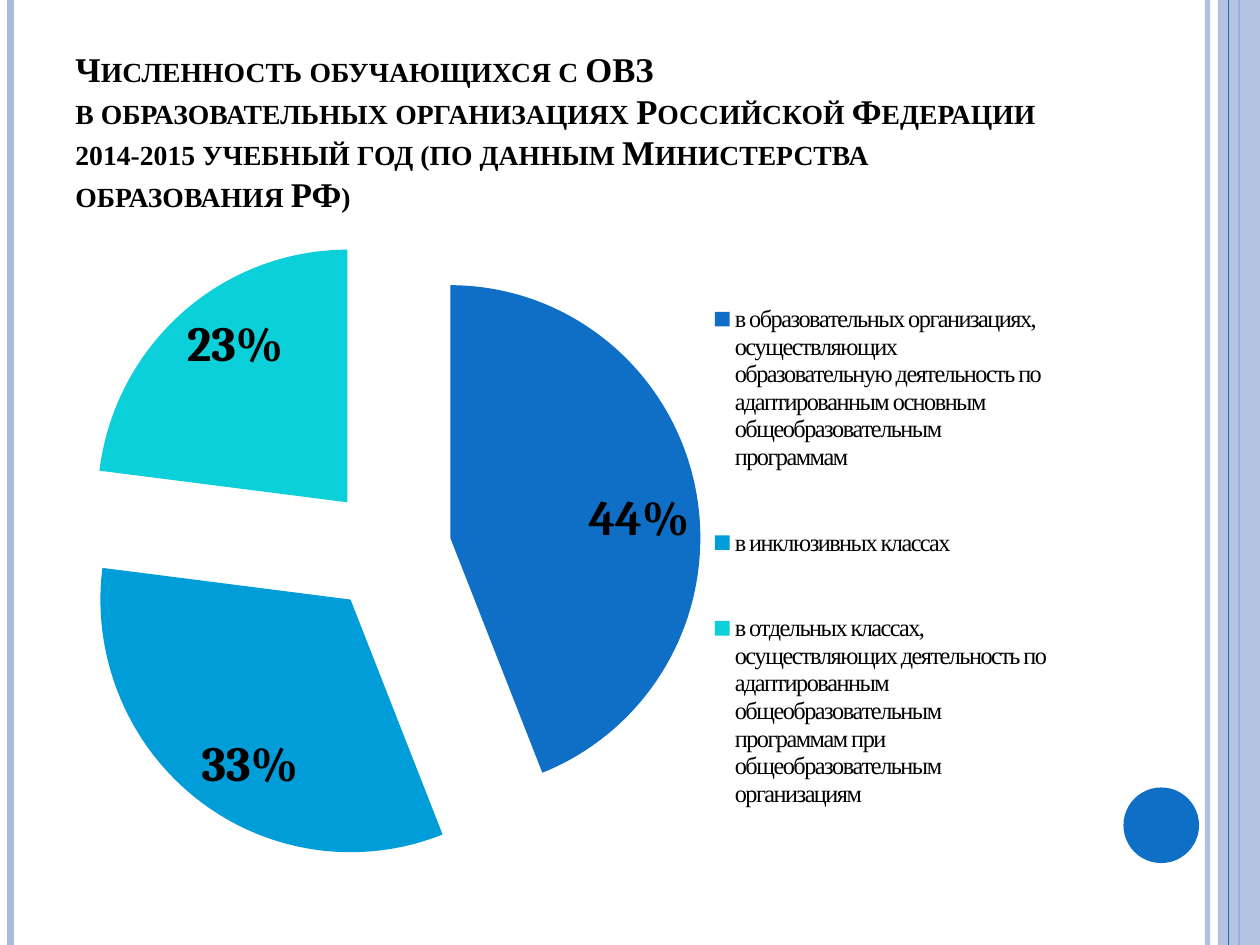
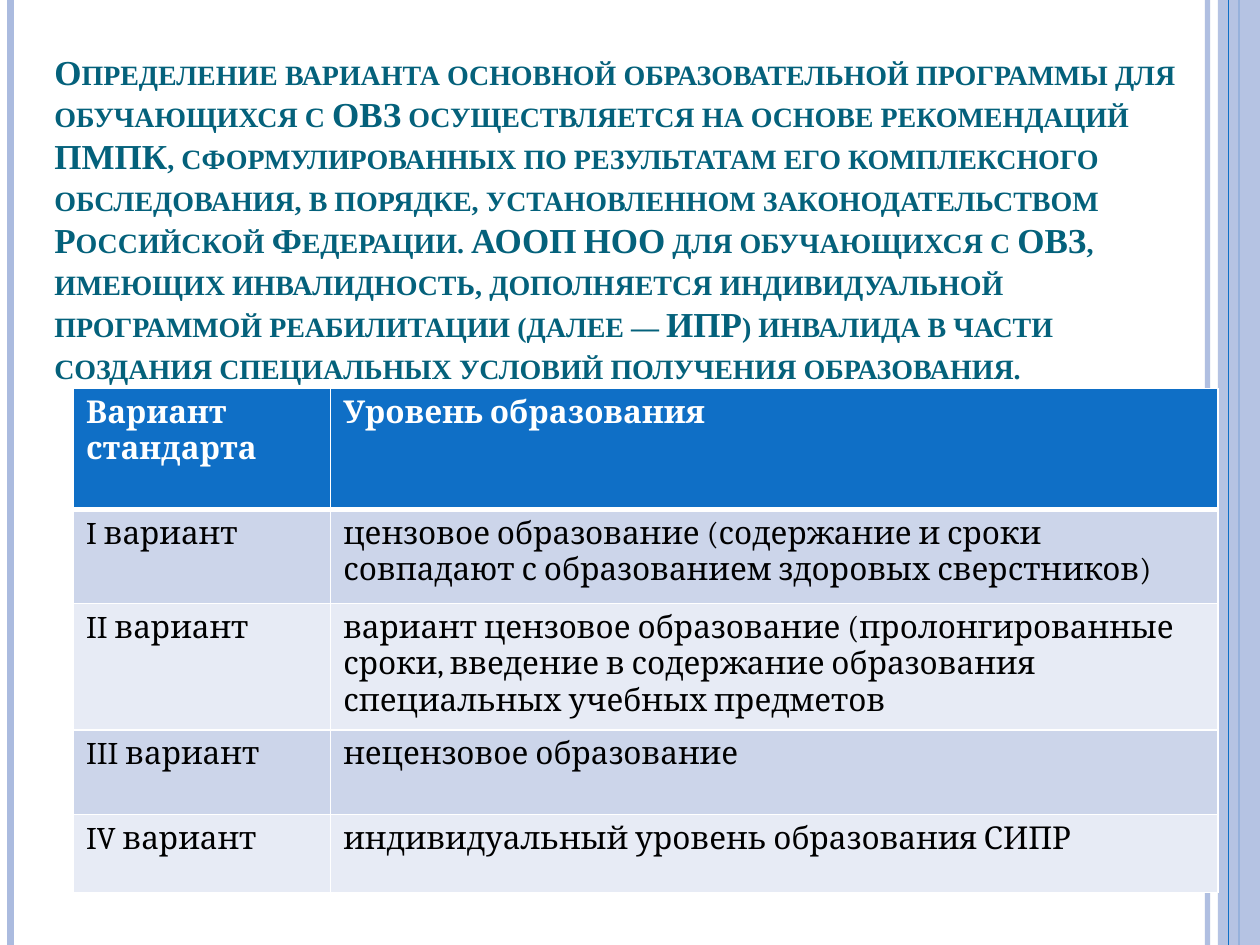
from lxml.etree import SubElement as Sub
from pptx import Presentation
from pptx.chart.data import CategoryChartData as Data
from pptx.dml.color import RGBColor as Rgb
from pptx.enum.chart import XL_CHART_TYPE as Kind, XL_LABEL_POSITION as Spot
from pptx.enum.chart import XL_LEGEND_POSITION as Side
from pptx.enum.shapes import MSO_CONNECTOR as Link, MSO_SHAPE as Form
from pptx.enum.text import MSO_ANCHOR as Anchor
from pptx.oxml import parse_xml
from pptx.oxml.ns import nsdecls, qn
from pptx.util import Pt

WIDE, HIGH = 720, 540
HEX = {"blue": "0F6FC6", "sky": "009DD9", "aqua": "0BD0D9", "pale": "ABBBDF",
       "teal": "04617B", "odd": "CCD5EA", "even": "E7EBF5",
       "white": "FFFFFF", "black": "000000"}
HEAD, BODY = "Times New Roman", "Cambria"

# x, line width, colour, opacity in percent
RULES = [(690, 3, "pale", 93), (6, 4.5, "pale", 100), (708, 1.5, "blue", 100)]
EDGE = (702, 0.75, "blue", 100)

HEADS = [
    ["Численность обучающихся с ОВЗ ",
     "в образовательных организациях Российской Федерации",
     "2014-2015 учебный год (по данным Министерства образования РФ)"],
    ["Определение варианта основной образовательной программы для обучающихся "
     "с ОВЗ осуществляется на основе рекомендаций ПМПК, сформулированных по "
     "результатам его комплексного обследования, в порядке, установленном "
     "законодательством Российской Федерации. АООП НОО для обучающихся с ОВЗ, "
     "имеющих инвалидность, дополняется индивидуальной программой реабилитации "
     "(далее — ИПР) инвалида в части создания специальных условий получения "
     "образования."],
]
SHARES = [
    ("в образовательных организациях, осуществляющих образовательную "
     "деятельность по адаптированным основным общеобразовательным программам",
     44, "blue"),
    ("в инклюзивных классах", 33, "sky"),
    ("в отдельных классах, осуществляющих деятельность по адаптированным "
     "общеобразовательным программам при общеобразовательным организациям",
     23, "aqua"),
]
# row height, variant, level
LEVELS = [
    (69.2, "Вариант стандарта", "Уровень образования"),
    (53.8, "I вариант", "цензовое образование (содержание и сроки совпадают "
     "с образованием здоровых сверстников)"),
    (69.8, "II вариант", "вариант цензовое образование (пролонгированные сроки, "
     "введение в содержание образования специальных учебных предметов"),
    (48.4, "III вариант", "нецензовое образование"),
    (44.6, "IV вариант", "индивидуальный уровень образования СИПР"),
]


def rgb(name):
    return Rgb.from_string(HEX[name])


def pts(box):
    return [Pt(v) for v in box]


def paint(fill, name, alpha=100):
    fill.solid()
    fill.fore_color.rgb = rgb(name)
    return alpha


def fade(shape, alpha):
    if alpha < 100:
        tone = shape._element.spPr.find(".//" + qn("a:srgbClr"))
        Sub(tone, qn("a:alpha"), val=str(alpha * 1000))


def style(font, face, size, tone, bold=False):
    font.name, font.size, font.bold = face, Pt(size), bold
    font.color.rgb = rgb(tone)


# Shared frame
def rule(slide, x, width, tone, alpha):
    line = slide.shapes.add_connector(Link.STRAIGHT, *pts((x, 0, x, HIGH)))
    line.line.width = Pt(width)
    line.line.color.rgb = rgb(tone)
    fade(line, alpha)
    Sub(line._element.spPr, qn("a:effectLst"))


def block(slide, form, box, tone, alpha=100):
    shape = slide.shapes.add_shape(form, *pts(box))
    shape.shadow.inherit = False
    paint(shape.fill, tone)
    shape.line.fill.background()
    fade(shape, alpha)


def frame(slide, dot):
    for spec in RULES:
        rule(slide, *spec)
    block(slide, Form.RECTANGLE, (696, 0, WIDE - 696, HIGH), "pale", 87)
    rule(slide, *EDGE)
    if dot:
        block(slide, Form.OVAL, (642, 450, 43.2, 43.2), "blue")


def title(slide, box, lines, size, tone):
    text = slide.shapes.add_textbox(*pts(box)).text_frame
    text.word_wrap = True
    text.vertical_anchor = Anchor.BOTTOM
    para = text.paragraphs[0]
    for i, line in enumerate(lines):
        if i:
            para.add_line_break()
        run = para.add_run()
        run.text = line
        style(run.font, HEAD, size, tone, True)
        run._r.get_or_add_rPr().set("cap", "small")


# Pie chart
def place(host, index, x, y, w, h, inner=False):
    for old in host.findall(qn("c:layout")):
        host.remove(old)
    target = '<c:layoutTarget val="inner"/>' if inner else ""
    parts = "".join(f'<c:{k} val="{v}"/>' for k, v in (
        ("xMode", "edge"), ("yMode", "edge"),
        ("x", x), ("y", y), ("w", w), ("h", h)))
    host.insert(index, parse_xml(
        f'<c:layout {nsdecls("c")}><c:manualLayout>{target}{parts}'
        '</c:manualLayout></c:layout>'))


def pie(slide, box):
    data = Data()
    data.categories = [name for name, _, _ in SHARES]
    data.add_series("Series 1", [value for _, value, _ in SHARES])
    chart = slide.shapes.add_chart(Kind.PIE, *pts(box), data).chart
    chart.has_title = False
    style(chart.font, BODY, 18, "black")
    root = chart.element
    place(root.find(".//" + qn("c:plotArea")), 0, 0.01, 0.02, 0.62, 0.94, True)

    # Slices
    plot = chart.plots[0]
    plot.vary_by_categories = True
    for i, (_, _, tone) in enumerate(SHARES):
        look = plot.series[0].points[i].format
        paint(look.fill, tone)
        look.line.fill.background()
    first = root.find(".//" + qn("c:dPt"))
    for old in root.findall(".//" + qn("c:ser") + "/" + qn("c:explosion")):
        old.getparent().remove(old)
    first.addprevious(parse_xml(f'<c:explosion {nsdecls("c")} val="25"/>'))

    # Labels
    plot.has_data_labels = True
    tags = plot.data_labels
    tags.show_percentage, tags.show_value = True, False
    tags.number_format, tags.number_format_is_linked = "0%", False
    tags.position = Spot.INSIDE_END
    style(tags.font, BODY, 28, "black", True)

    # Legend
    chart.has_legend = True
    key = chart.legend
    key.position, key.include_in_layout = Side.RIGHT, False
    style(key.font, HEAD, 14, "black")
    node = root.find(".//" + qn("c:legend"))
    node.find(".//" + qn("a:defRPr")).set("spc", "-100")
    place(node, 1, 0.635, 0.04, 0.335, 0.92)


# Table of variants
def border(cell, deep):
    props = cell._tc.get_or_add_tcPr()
    for i, side in enumerate("LRTB"):
        width = Pt(3 if deep and side == "B" else 1)
        props.insert(i, parse_xml(
            f'<a:ln{side} {nsdecls("a")} w="{width}"><a:solidFill>'
            f'<a:srgbClr val="{HEX["white"]}"/></a:solidFill></a:ln{side}>'))


def grid(slide, left, top, cols):
    high = sum(row[0] for row in LEVELS)
    box = pts((left, top, sum(cols), high))
    table = slide.shapes.add_table(len(LEVELS), len(cols), *box).table
    for col, width in zip(table.columns, cols):
        col.width = Pt(width)
    for i, (tall, *texts) in enumerate(LEVELS):
        table.rows[i].height = Pt(tall)
        top_row = i == 0
        tone = "blue" if top_row else "odd" if i % 2 else "even"
        for j, words in enumerate(texts):
            cell = table.cell(i, j)
            paint(cell.fill, tone)
            border(cell, top_row)
            run = cell.text_frame.paragraphs[0].add_run()
            run.text = words
            style(run.font, BODY, 18, "white" if top_row else "black", top_row)


# Slides
def count(slide):
    frame(slide, True)
    title(slide, (36, 36, 588, 90), HEADS[0], 19.8, "black")
    pie(slide, (36, 126, 588, 384))


def choice(slide):
    frame(slide, False)
    title(slide, (24, 0, 678, 224.6), HEADS[1], 20, "teal")
    grid(slide, 42, 222, (147, 507))


def main():
    deck = Presentation()
    deck.slide_width, deck.slide_height = Pt(WIDE), Pt(HIGH)
    for build in (count, choice):
        build(deck.slides.add_slide(deck.slide_layouts[6]))
    deck.save("out.pptx")


if __name__ == "__main__":
    main()
